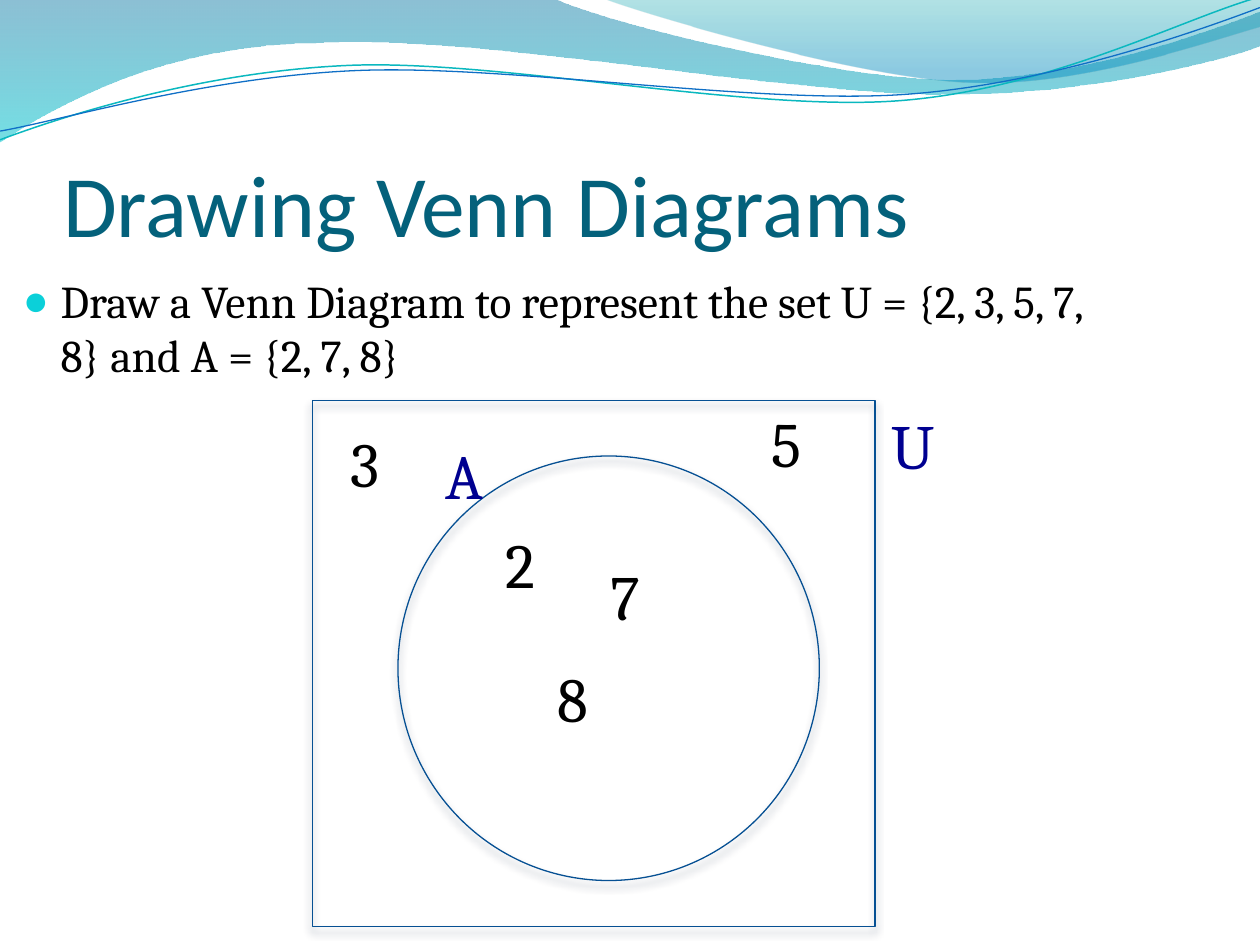
from lxml import etree
from pptx import Presentation
from pptx import util as u
from pptx.dml.color import RGBColor
from pptx.enum import shapes, text
from pptx.oxml import parse_xml
from pptx.oxml.ns import nsdecls, qn

Pt = u.Pt
HUES = {
    "title": "04617B", "ink": "000000", "label": "000090", "bullet": "0BD0D9",
    "edge": "065093", "shade": "002041", "teal": "0AB8BF", "blue": "0F6FC6",
    "deep": "0074A1", "aqua": "00C6CF", "sea": "00A1A9", "sky": "008BBF",
}


class Deck:
    body, head = "Cambria", "Calibri"

    def __init__(self):
        self.prs = Presentation()
        self.prs.slide_width, self.prs.slide_height = Pt(720), Pt(540)
        self.slide = self.prs.slides.add_slide(self.prs.slide_layouts[5])
        self.shapes = self.slide.shapes

    def hue(self, name):
        return RGBColor.from_string(HUES[name])

    def font(self, par, size, hue, face):
        par.font.size, par.font.name = Pt(size), face
        par.font.color.rgb = self.hue(hue)

    def place(self, shape, box):
        shape.left, shape.top, shape.width, shape.height = map(Pt, box)

    def outline(self, shape, hue, width):
        shape.fill.background()
        shape.line.color.rgb = self.hue(hue)
        shape.line.width = Pt(width)

    def curve(self, steps, close):
        pts = [(Pt(x), Pt(y)) for step in steps
               for x, y in zip(step[::2], step[1::2])]
        pen = self.shapes.build_freeform(*pts[0], scale=1.0)
        pen.add_line_segments(pts[1:], close=close)
        shape = pen.convert_to_shape()
        shape.shadow.inherit = False
        lines = iter(list(shape._element.iter(qn("a:lnTo"))))
        for step in steps[1:]:
            line = next(lines)
            if len(step) == 6:
                bend = etree.Element(qn("a:cubicBezTo"))
                line.addprevious(bend)
                for part in (line, next(lines), next(lines)):
                    bend.append(part[0])
                    part.getparent().remove(part)
        return shape

    def wave(self, steps, *stops):
        shape = self.curve(steps, True)
        shape.line.fill.background()
        shape.fill.gradient()
        shape.fill.gradient_angle = 270
        for stop, (pos, hue, alpha) in zip(shape.fill.gradient_stops, stops):
            stop.position = pos
            stop.color.rgb = self.hue(hue)
        tints = shape._element.spPr.iter(qn("a:srgbClr"))
        for tint, (pos, hue, alpha) in zip(tints, stops):
            etree.SubElement(tint, qn("a:alpha")).set("val", str(alpha * 1000))

    def stroke(self, steps, hue, width):
        self.outline(self.curve(steps, False), hue, width)

    def title(self, words, box):
        shape = self.shapes.title
        self.shapes._spTree.append(shape._element)
        self.place(shape, box)
        frame = shape.text_frame
        frame.text = words
        frame.auto_size = text.MSO_AUTO_SIZE.NONE
        frame.vertical_anchor = text.MSO_ANCHOR.BOTTOM
        frame.margin_left = frame.margin_right = frame.margin_bottom = 0
        frame.margin_top = Pt(3.6)
        par = frame.paragraphs[0]
        par.alignment = text.PP_ALIGN.LEFT
        self.font(par, 50, "title", self.head)

    def text(self, words, box, size, hue="ink"):
        frame = self.shapes.add_textbox(*map(Pt, box)).text_frame
        frame.word_wrap = True
        frame.text = words
        par = frame.paragraphs[0]
        self.font(par, size, hue, self.body)
        return par

    def bullet(self, words, box):
        par = self.text(words, box, 26)
        par.space_before = Pt(5.2)
        props = par._p.get_or_add_pPr()
        props.set("marL", str(Pt(21.6)))
        props.set("indent", str(-Pt(21.6)))
        marks = (
            f'<a:buClr {nsdecls("a")}><a:srgbClr val="{HUES["bullet"]}"/></a:buClr>',
            f'<a:buSzPct {nsdecls("a")} val="95000"/>',
            f'<a:buFont {nsdecls("a")} typeface="Arial"/>',
            f'<a:buChar {nsdecls("a")} char="●"/>',
        )
        spot = props.index(props.find(qn("a:spcBef"))) + 1
        for i, mark in enumerate(marks):
            props.insert(spot + i, parse_xml(mark))

    def region(self, kind, box):
        shape = self.shapes.add_shape(kind, *map(Pt, box))
        self.outline(shape, "edge", 0.75)
        shape.shadow.inherit = False
        glow = shape._element.spPr.find(qn("a:effectLst"))
        glow.append(parse_xml(
            f'<a:outerShdw {nsdecls("a")} blurRad="{Pt(4.5)}" dist="{Pt(3)}" '
            f'dir="5400000" rotWithShape="0"><a:srgbClr val="{HUES["shade"]}">'
            '<a:alpha val="48000"/></a:srgbClr></a:outerShdw>'))

    def label(self, words, x, y, hue="ink"):
        par = self.text(words, (x, y, 68.4, 51), 36, hue)
        par._parent.auto_size = text.MSO_AUTO_SIZE.SHAPE_TO_FIT_TEXT


def main():
    deck = Deck()
    deck.wave(
        [(0, -0.7), (316.8, -0.7),
         (342.7, 12.2, 478.1, 45.4, 545.8, 45.4),
         (614.2, 45.4, 689.8, 18.7, 720, 6.5), (720.7, 25.9),
         (707.8, 31.7, 626.4, 54.7, 537.1, 54),
         (447.8, 54, 275, 20.2, 185, 24.5),
         (92.9, 25.2, 33.1, 59.8, -0.7, 81.4)],
        (0, "deep", 45), (1, "aqua", 55))
    deck.wave(
        [(344.9, -0.7), (366.5, 7.9, 491, 44.6, 553.7, 46.8),
         (616.3, 49.7, 691.9, 23, 720, 15.1), (720, 0)],
        (0, "sea", 30), (0.8, "sky", 45))
    deck.stroke(
        [(0, 79.9), (34.6, 67, 113.8, 41, 199.4, 37.4),
         (284.4, 33.8, 427, 64.1, 513.4, 57.6),
         (599.8, 51.1, 675.4, 10.8, 718.6, -1.4)], "teal", 0.85)
    deck.stroke(
        [(0, 74.9), (33.8, 69.1, 118.1, 43.9, 203.8, 40.3),
         (290.2, 36.7, 429.8, 59.8, 516.2, 54),
         (601.9, 48.2, 691.2, 15.1, 720, 4.3)], "blue", 0.75)

    deck.title("Drawing Venn Diagrams", (36, 55.8, 648, 90))
    deck.bullet("Draw a Venn Diagram to represent the set "
                "U = {2, 3, 5, 7, 8} and A = {2, 7, 8}", (6, 152.4, 648, 87))

    deck.region(shapes.MSO_SHAPE.OVAL, (227.4, 260.6, 240.8, 242.6))
    deck.region(shapes.MSO_SHAPE.RECTANGLE, (178.6, 229, 321.4, 300.6))
    for words, x, y in (("2", 281.5, 296.6), ("7", 341.6, 315),
                        ("8", 311.3, 373.4), ("5", 433.9, 227.5), ("3", 193, 239.3)):
        deck.label(words, x, y)
    for words, x, y in (("A", 247.7, 246), ("U", 502.6, 229)):
        deck.label(words, x, y, "label")

    deck.prs.save("out.pptx")


if __name__ == "__main__":
    main()
